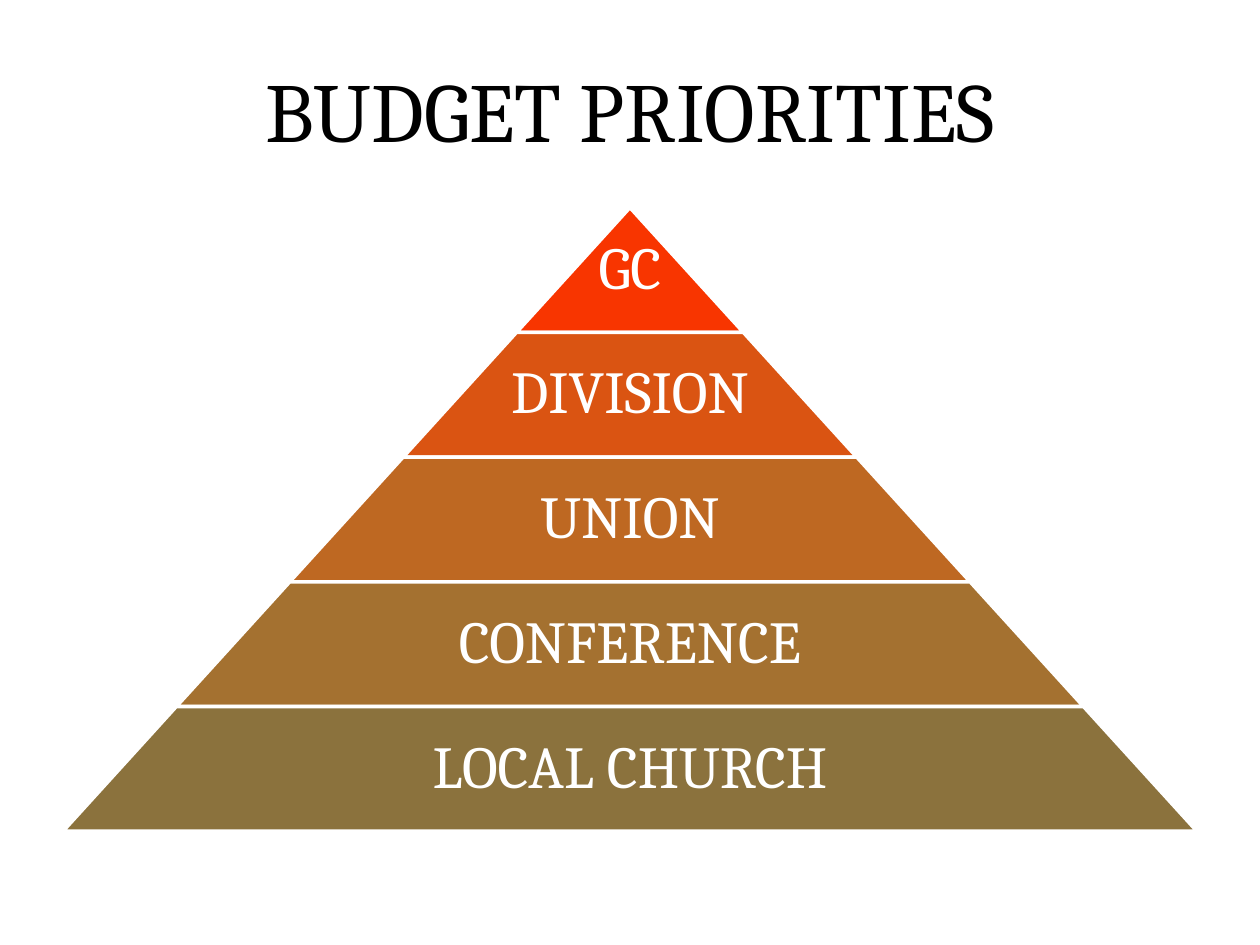
import pptx
import pptx.util
import pptx.dml.color
import pptx.enum.shapes
import pptx.enum.text

Pt = pptx.util.Pt
RGBColor = pptx.dml.color.RGBColor

FONT = "Cambria"
BLACK = RGBColor(0x00, 0x00, 0x00)
WHITE = RGBColor(0xFF, 0xFF, 0xFF)
LEVELS = [
    ("GC", RGBColor(0xF8, 0x35, 0x00)),
    ("DIVISION", RGBColor(0xDA, 0x54, 0x12)),
    ("UNION", RGBColor(0xBE, 0x68, 0x22)),
    ("CONFERENCE", RGBColor(0xA4, 0x71, 0x30)),
    ("LOCAL CHURCH", RGBColor(0x8B, 0x72, 0x3D)),
]

SLIDE_WIDTH, SLIDE_HEIGHT = 720, 540
PYRAMID_TOP, PYRAMID_WIDTH = 118.6, 648
LEVEL_HEIGHT = 71.28
WIDTH_STEP = PYRAMID_WIDTH / len(LEVELS)
SLOPE = WIDTH_STEP / 2 / LEVEL_HEIGHT
LABEL_SHARE = 0.65


def write_centred(frame, text, size, color):
    frame.text = text
    frame.word_wrap = True
    frame.auto_size = pptx.enum.text.MSO_AUTO_SIZE.NONE
    frame.vertical_anchor = pptx.enum.text.MSO_ANCHOR.MIDDLE
    paragraph = frame.paragraphs[0]
    paragraph.alignment = pptx.enum.text.PP_ALIGN.CENTER
    font = paragraph.runs[0].font
    font.name, font.size, font.color.rgb = FONT, Pt(size), color


def centred_box(top, width):
    """Return left, top, width and height of a level-high box on the slide's axis."""
    return Pt((SLIDE_WIDTH - width) / 2), Pt(top), Pt(width), Pt(LEVEL_HEIGHT)


def add_title(slide, text):
    title = slide.shapes.title
    title.left, title.top = Pt(60.5), Pt(6.5)
    title.width, title.height = Pt(599), Pt(111.6)
    write_centred(title.text_frame, text, 48, BLACK)


def add_band(slide, top, width, color):
    band = slide.shapes.add_shape(
        pptx.enum.shapes.MSO_SHAPE.TRAPEZOID, *centred_box(top, width))
    band.adjustments[0] = SLOPE
    band.shadow.inherit = False
    band.fill.solid()
    band.fill.fore_color.rgb = color
    band.line.color.rgb = WHITE
    band.line.width = Pt(2)


def add_label(slide, top, width, text):
    frame = slide.shapes.add_textbox(*centred_box(top, width)).text_frame
    write_centred(frame, text, 34, WHITE)
    frame.margin_left = frame.margin_right = Pt(3.6)
    frame.margin_top = frame.margin_bottom = Pt(3.6)
    frame.paragraphs[0].line_spacing = 0.9


def add_pyramid(slide):
    for index, (name, color) in enumerate(LEVELS):
        top = PYRAMID_TOP + index * LEVEL_HEIGHT
        width = (index + 1) * WIDTH_STEP
        add_band(slide, top, width, color)
        # The tip is too narrow for a reduced label box.
        add_label(slide, top, width * LABEL_SHARE if index else width, name)


def main():
    deck = pptx.Presentation()
    deck.slide_width, deck.slide_height = Pt(SLIDE_WIDTH), Pt(SLIDE_HEIGHT)
    slide = deck.slides.add_slide(deck.slide_layouts.get_by_name("Title Only"))
    add_title(slide, "BUDGET PRIORITIES")
    add_pyramid(slide)
    deck.save("out.pptx")


if __name__ == "__main__":
    main()
